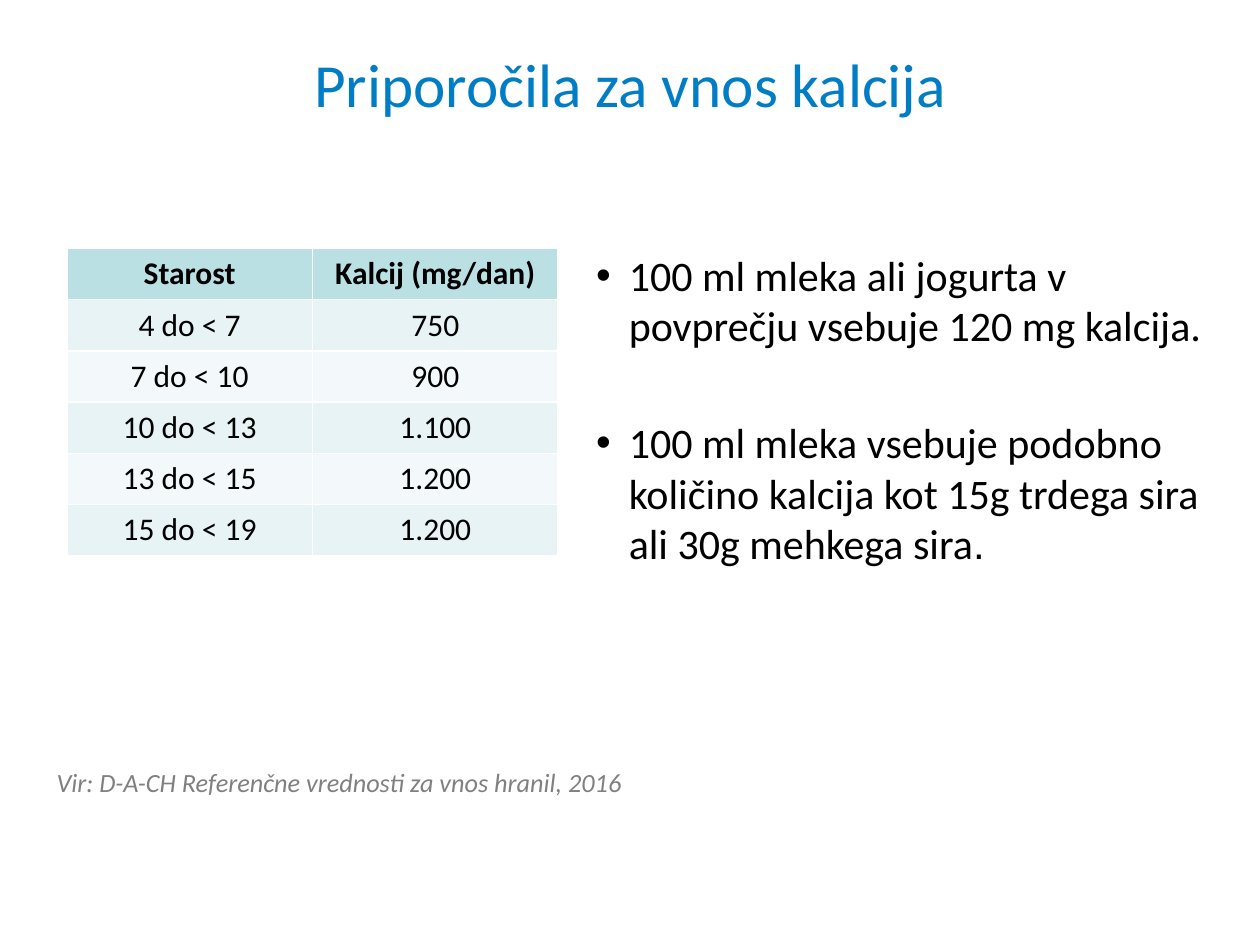
from lxml.etree import SubElement
from pptx import Presentation
from pptx.dml.color import RGBColor
from pptx.enum.text import MSO_ANCHOR as Anchor, MSO_AUTO_SIZE as Fit, PP_ALIGN as Align
from pptx.oxml.ns import qn
from pptx.util import Inches, Pt


def paint(color, value):
    color.rgb = RGBColor.from_string(value)


def write(paragraph, text, size=24, color="000000", font="Calibri",
          bold=False, italic=False, align=Align.LEFT):
    paragraph.alignment = align
    run = paragraph.add_run()
    run.text = text
    run.font.name = font
    run.font.size = Pt(size)
    run.font.bold = bold
    run.font.italic = italic
    paint(run.font.color, color)


deck = Presentation()
deck.slide_width, deck.slide_height = Inches(10), Inches(7.5)
W, H = deck.slide_width / 100, deck.slide_height / 100
slide = deck.slides.add_slide(deck.slide_layouts[1])
heading, advice = slide.placeholders

for holder, left, top, width, height in [
    (heading, 2.4, 4.8, 95.3, 8.4),
    (advice, 46.9, 19.6, 50.8, 66.8),
]:
    holder.left, holder.width = int(left * W), int(width * W)
    holder.top, holder.height = int(top * H), int(height * H)
    frame = holder.text_frame
    frame.auto_size = Fit.NONE
    frame.word_wrap = True
    frame.margin_left = frame.margin_right = Inches(0.04)
    frame.margin_top = frame.margin_bottom = Inches(0.04)

heading.text_frame.vertical_anchor = Anchor.BOTTOM
write(heading.text_frame.paragraphs[0], "Priporočila za vnos kalcija",
      size=35, color="007DC5", align=Align.CENTER)

facts = [
    "100 ml mleka ali jogurta v povprečju vsebuje 120 mg kalcija",
    "100 ml mleka vsebuje podobno količino kalcija kot 15g trdega sira ali 30g mehkega sira",
]
advice.text_frame.vertical_anchor = Anchor.TOP
advice.text_frame.margin_top = Inches(0.51)
for index, fact in enumerate(facts):
    item = advice.text_frame.add_paragraph() if index else advice.text_frame.paragraphs[0]
    item.space_before = Pt(38 if index else 0)
    properties = item._p.get_or_add_pPr()
    properties.set("marL", str(Inches(0.26)))
    properties.set("indent", str(-Inches(0.26)))
    SubElement(properties, qn("a:buFont")).set("typeface", "Arial")
    SubElement(properties, qn("a:buChar")).set("char", "•")
    write(item, fact)
    write(item, ".", font="Arial" if index else "Calibri")

intake = [
    ("Starost", "Kalcij (mg/dan)"),
    ("4 do < 7", "750"),
    ("7 do < 10", "900"),
    ("10 do < 13", "1.100"),
    ("13 do < 15", "1.200"),
    ("15 do < 19", "1.200"),
]
column, row_height = 19.5 * W, 5.42 * H
table = slide.shapes.add_table(
    len(intake), 2, int(5.3 * W), int(26.3 * H),
    int(2 * column), int(len(intake) * row_height)).table
for r, record in enumerate(intake):
    band = "BBE0E3" if r == 0 else ("F3F9FA", "E7F3F4")[r % 2]
    for c, value in enumerate(record):
        cell = table.cell(r, c)
        cell.fill.solid()
        paint(cell.fill.fore_color, band)
        write(cell.text_frame.paragraphs[0], value, size=18, bold=r == 0, align=Align.CENTER)

citation = slide.shapes.add_textbox(
    int(3.5 * W), int(80.4 * H), int(66.9 * W), int(4.7 * H)).text_frame
citation.word_wrap = True
citation.auto_size = Fit.SHAPE_TO_FIT_TEXT
write(citation.paragraphs[0], "Vir: D-A-CH Referenčne vrednosti za vnos hranil, 2016",
      size=15, color="808080", italic=True)

deck.save("out.pptx")
